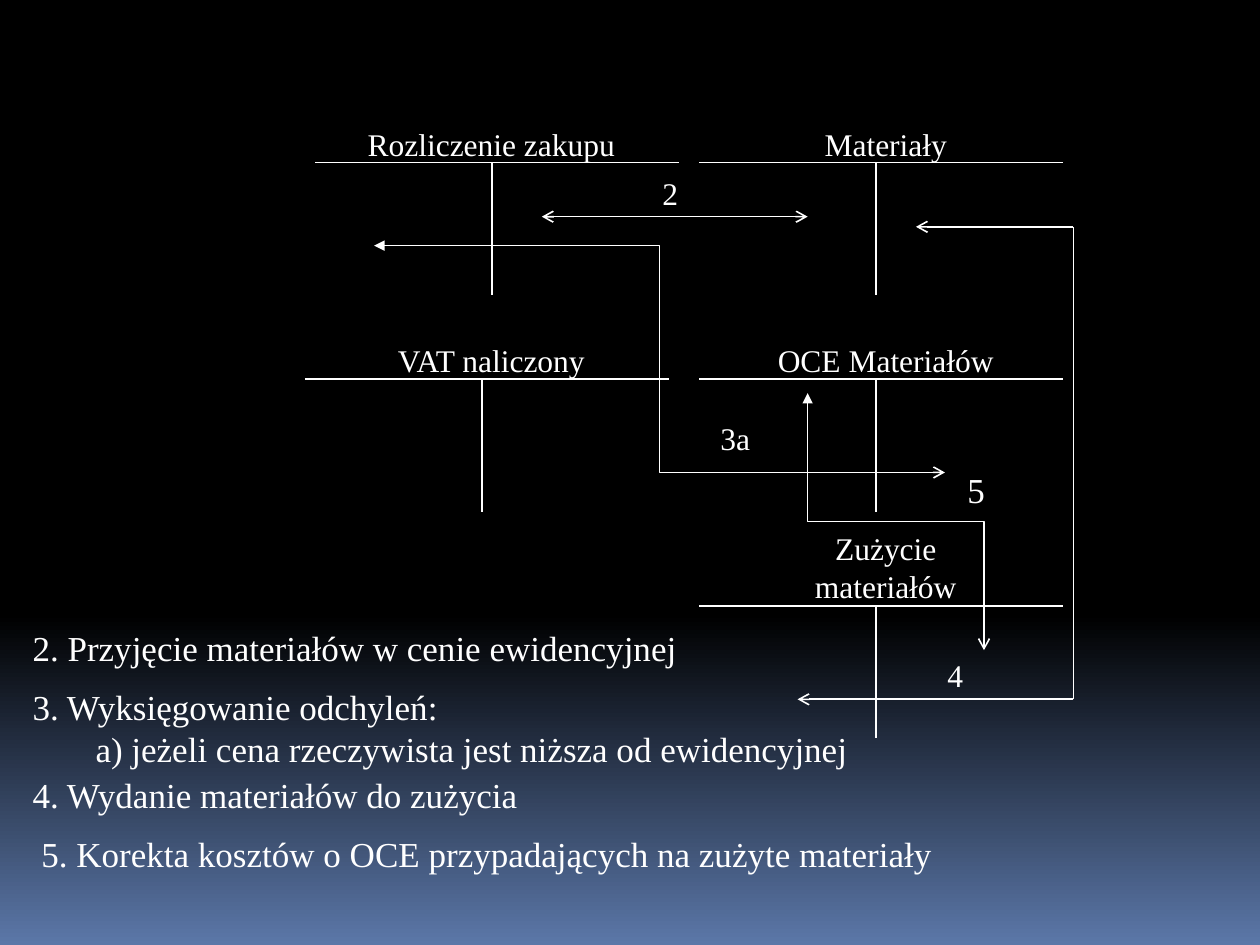
from lxml import etree
from pptx import Presentation
from pptx.dml.color import RGBColor
from pptx.enum.shapes import MSO_CONNECTOR
from pptx.enum.text import MSO_AUTO_SIZE, PP_ALIGN
from pptx.oxml.ns import qn
from pptx.util import Inches, Pt

STRAIGHT, ELBOW = MSO_CONNECTOR.STRAIGHT, MSO_CONNECTOR.ELBOW
LEFT, CENTER = PP_ALIGN.LEFT, PP_ALIGN.CENTER
FIT_SHAPE = MSO_AUTO_SIZE.SHAPE_TO_FIT_TEXT
BLANK_LAYOUT = 6
COLORS = {"white": "FFFFFF", "black": "000000", "blue": "5B77A8"}


class LedgerSlide:
    """Style and drawing methods for one slide of T-accounts."""

    font = "Times New Roman"
    line_width = Pt(0.94)
    bar_width, stem_height = 2.89, 1.05
    title_width = 2.18

    def __init__(self, slide):
        self.slide = slide

    def color(self, name):
        return RGBColor.from_string(COLORS[name])

    def background(self, stops):
        fill = self.slide.background.fill
        fill.gradient()
        fill.gradient_angle = 270
        for stop, (position, name) in zip(fill.gradient_stops, stops):
            stop.position = position
            stop.color.rgb = self.color(name)

    def text(self, box, lines, size=18, align=LEFT, wrap=False):
        shape = self.slide.shapes.add_textbox(*map(Inches, box))
        frame = shape.text_frame
        frame.word_wrap = wrap
        frame.auto_size = FIT_SHAPE
        font_format = {"name": self.font, "size": Pt(size)}
        for index, line in enumerate(lines):
            paragraph = frame.add_paragraph() if index else frame.paragraphs[0]
            paragraph.alignment = align
            run = paragraph.add_run()
            run.text = line
            for attribute, value in font_format.items():
                setattr(run.font, attribute, value)
            run.font.color.rgb = self.color("white")

    def line(self, start, end, head=None, tail=None, kind=STRAIGHT):
        connector = self.slide.shapes.add_connector(
            kind, *map(Inches, (*start, *end)))
        connector.line.width = self.line_width
        connector.line.color.rgb = self.color("white")
        properties = connector.element.spPr
        outline = properties.find(qn("a:ln"))
        for tag, arrow in (("a:headEnd", head), ("a:tailEnd", tail)):
            if arrow:
                etree.SubElement(outline, qn(tag), type=arrow)
        etree.SubElement(properties, qn("a:effectLst"))
        return connector

    def upright_elbow(self, start, end, **arrows):
        """Elbow that leaves and arrives vertically: a quarter-turned one."""
        (x1, y1), (x2, y2) = start, end
        middle_x, middle_y = (x1 + x2) / 2, (y1 + y2) / 2
        half_x, half_y = (x2 - x1) / 2, (y2 - y1) / 2
        connector = self.line((middle_x + half_y, middle_y - half_x),
                              (middle_x - half_y, middle_y + half_x),
                              kind=ELBOW, **arrows)
        connector.element.spPr.find(qn("a:xfrm")).set("rot", str(270 * 60000))

    def account(self, name, left, top, title_left, title_height=0.4):
        stem = left + 1.405
        self.line((left, top), (left + self.bar_width, top))
        self.line((stem, top), (stem, top + self.stem_height))
        title_top = top + 0.05 - title_height
        self.text((title_left, title_top, self.title_width, title_height),
                  [name], align=CENTER, wrap=True)


def main():
    presentation = Presentation()
    presentation.slide_width, presentation.slide_height = Inches(10), Inches(7.5)
    slide = presentation.slides.add_slide(
        presentation.slide_layouts[BLANK_LAYOUT])
    ledger = LedgerSlide(slide)
    ledger.background([(0.65, "black"), (1, "blue")])

    # T-accounts
    ledger.account("Materiały", 5.55, 1.29, 5.94)
    ledger.account("Rozliczenie zakupu", 2.5, 1.29, 2.81)
    ledger.account("OCE Materiałów", 5.55, 3.01, 5.94)
    ledger.account("Zużycie materiałów", 5.55, 4.81, 5.94, title_height=0.71)
    ledger.account("VAT naliczony", 2.42, 3.01, 2.81)

    # Entry 2: receipt of materials
    ledger.line((4.3, 1.72), (6.41, 1.72), head="arrow", tail="arrow")
    ledger.text((5.16, 1.33, 0.33, 0.4), ["2"])

    # Entry 3a: price variance
    ledger.line((2.97, 1.95), (7.5, 3.75), head="triangle", tail="arrow",
                kind=ELBOW)
    ledger.text((5.62, 3.28, 0.44, 0.4), ["3a"], wrap=True)

    # Entry 4: issue of materials
    upper, lower = (8.52, 1.8), (8.52, 5.55)
    ledger.line(upper, (7.27, 1.8), tail="arrow")
    ledger.line(upper, lower)
    ledger.line(lower, (6.33, 5.55), tail="arrow")
    ledger.text((7.42, 5.16, 0.33, 0.4), ["4"])

    # Entry 5: cost correction
    ledger.upright_elbow((6.41, 3.12), (7.81, 5.16),
                         head="triangle", tail="arrow")
    ledger.text((7.58, 3.67, 0.34, 0.44), ["5"], size=20)

    # Legend
    legend = [
        ((0.16, 4.92, 5.35, 0.44),
         ["2. Przyjęcie materiałów w cenie ewidencyjnej"]),
        ((0.16, 5.39, 7.22, 0.77),
         ["3. Wyksięgowanie odchyleń:",
          "\ta) jeżeli cena rzeczywista jest niższa od ewidencyjnej"]),
        ((0.16, 6.09, 4.08, 0.44), ["4. Wydanie materiałów do zużycia"]),
        ((0.23, 6.56, 7.32, 0.44),
         ["5. Korekta kosztów o OCE przypadających na zużyte materiały"]),
    ]
    for box, lines in legend:
        ledger.text(box, lines, size=20)

    presentation.save("out.pptx")


if __name__ == "__main__":
    main()
